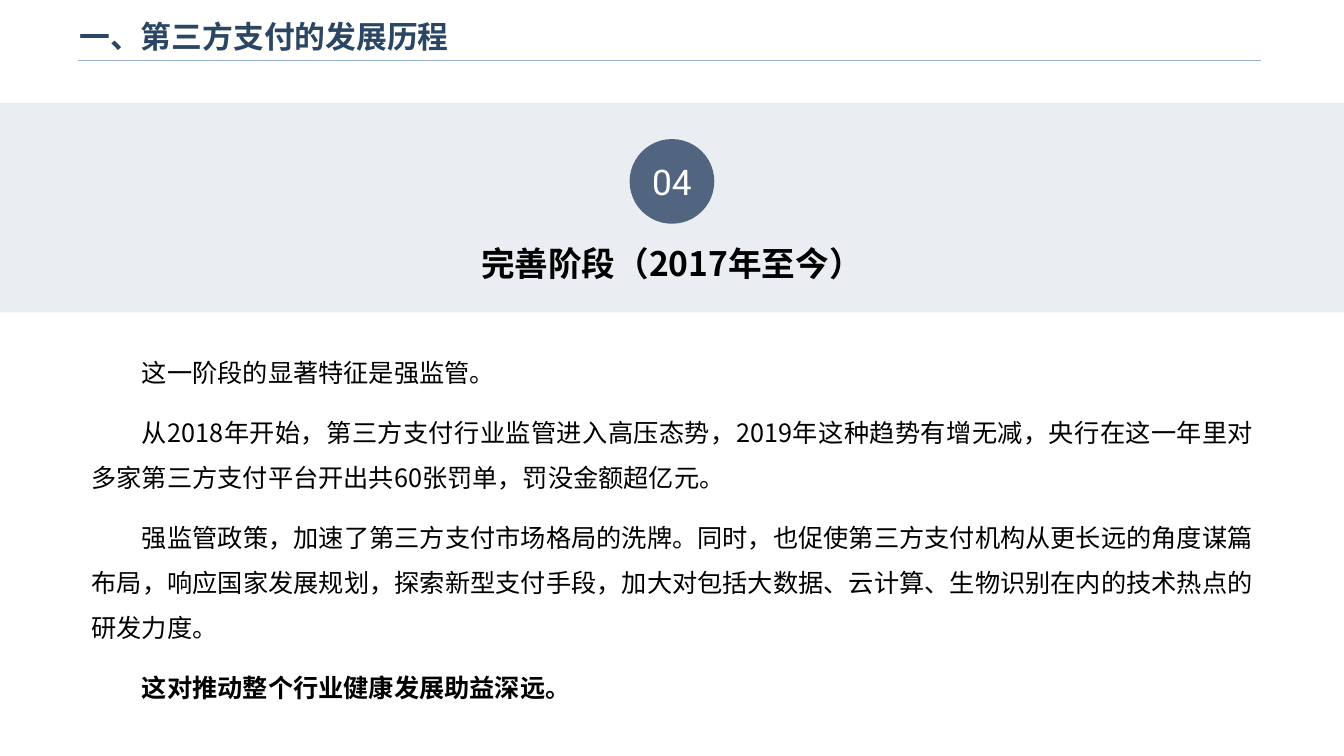
from lxml import etree
from pptx import Presentation
from pptx.dml.color import RGBColor
from pptx.enum.shapes import MSO_CONNECTOR, MSO_SHAPE
from pptx.enum.text import MSO_ANCHOR, PP_ALIGN
from pptx.oxml.ns import qn
from pptx.util import Inches, Pt

RECTANGLE, OVAL = MSO_SHAPE.RECTANGLE, MSO_SHAPE.OVAL
STRAIGHT = MSO_CONNECTOR.STRAIGHT
TOP, MIDDLE = MSO_ANCHOR.TOP, MSO_ANCHOR.MIDDLE
LEFT, CENTER, JUSTIFY = PP_ALIGN.LEFT, PP_ALIGN.CENTER, PP_ALIGN.JUSTIFY

SLIDE_WIDTH, SLIDE_HEIGHT = 13.33, 7.5
CHINESE_FONT = "Noto Sans CJK SC"
BODY = [
    ("这一阶段的显著特征是强监管。", False),
    ("从2018年开始，第三方支付行业监管进入高压态势，2019年这种趋势有增无减，"
     "央行在这一年里对多家第三方支付平台开出共60张罚单，罚没金额超亿元。", False),
    ("强监管政策，加速了第三方支付市场格局的洗牌。同时，也促使第三方支付机构从更长远的角度谋篇布局，"
     "响应国家发展规划，探索新型支付手段，加大对包括大数据、云计算、生物识别在内的技术热点的研发力度。", False),
    ("这对推动整个行业健康发展助益深远。", True),
]


def color(value):
    """Turn a hex string into a colour."""
    return RGBColor.from_string(value)


def add_paragraph(frame, text, size, font=CHINESE_FONT, fill="000000", bold=False,
                  align=LEFT, spacing=1.0, after=0, indent=0):
    """Write one formatted paragraph, using the empty first one if there is one."""
    paragraph = frame.paragraphs[0]
    if paragraph.runs:
        paragraph = frame.add_paragraph()
    paragraph.alignment = align
    paragraph.line_spacing = spacing
    paragraph.space_after = Pt(after)
    properties = paragraph._p.get_or_add_pPr()
    properties.set("marL", "0")
    properties.set("indent", str(Inches(indent)))
    run = paragraph.add_run()
    run.text = text
    run.font.name, run.font.size, run.font.bold = font, Pt(size), bold
    run.font.color.rgb = color(fill)
    east_asian = etree.SubElement(run._r.get_or_add_rPr(), qn("a:ea"))
    east_asian.set("typeface", CHINESE_FONT)


def add_text_box(slide, left, top, width, height, anchor=TOP):
    """Add a wrapping text box and return its text frame."""
    box = slide.shapes.add_textbox(Inches(left), Inches(top), Inches(width), Inches(height))
    frame = box.text_frame
    frame.word_wrap = True
    frame.vertical_anchor = anchor
    return frame


def add_filled_shape(slide, kind, left, top, width, height, fill):
    """Add a flat preset shape without an outline."""
    shape = slide.shapes.add_shape(kind, Inches(left), Inches(top), Inches(width), Inches(height))
    shape.shadow.inherit = False
    shape.fill.solid()
    shape.fill.fore_color.rgb = color(fill)
    shape.line.fill.background()
    return shape


def add_header(slide, left, top, width, height):
    """Place the slide title and the rule beneath it."""
    frame = add_text_box(slide, left, top, width, height, MIDDLE)
    add_paragraph(frame, "一、第三方支付的发展历程", 22, font="Arial", fill="2B4663", bold=True)
    rule_left, rule_top = left + 0.08, top + 0.51
    rule = slide.shapes.add_connector(STRAIGHT, Inches(rule_left), Inches(rule_top),
                                      Inches(rule_left + 11.74), Inches(rule_top))
    rule.line.color.rgb = color("98B4D2")
    rule.line.width = Pt(1)
    etree.SubElement(rule._element.spPr, qn("a:effectLst"))


def add_stage_band(slide, left, top, width, height):
    """Place the band with the stage number and the stage name."""
    add_filled_shape(slide, RECTANGLE, left, top, width, height, "EAEEF2")
    name_width, diameter = 11.24, 0.84
    name = add_text_box(slide, left + (width - name_width) / 2, top + 1.22, name_width, 0.62)
    add_paragraph(name, "完善阶段（2017年至今）", 24, bold=True, align=CENTER, spacing=1.3)
    badge = add_filled_shape(slide, OVAL, left + (width - diameter) / 2, top + 0.36,
                             diameter, diameter, "526580")
    frame = badge.text_frame
    frame.word_wrap = False
    frame.vertical_anchor = MIDDLE
    frame.margin_left = frame.margin_right = frame.margin_top = frame.margin_bottom = 0
    add_paragraph(frame, "04", 25.2, font="Roboto", fill="FFFFFF", align=CENTER)


def add_body(slide, left, top, width, height):
    """Place the indented, justified paragraphs."""
    frame = add_text_box(slide, left, top, width, height)
    for text, bold in BODY:
        add_paragraph(frame, text, 18, bold=bold, align=JUSTIFY, spacing=1.5, after=10, indent=0.5)


def main():
    """Build the slide and save it."""
    presentation = Presentation()
    presentation.slide_width = Inches(SLIDE_WIDTH)
    presentation.slide_height = Inches(SLIDE_HEIGHT)
    slide = presentation.slides.add_slide(presentation.slide_layouts[6])
    add_header(slide, 0.69, 0.09, 10.71, 0.53)
    add_stage_band(slide, 0, 1.02, SLIDE_WIDTH, 2.08)
    add_body(slide, 0.81, 3.35, 11.72, 3.7)
    presentation.save("out.pptx")


if __name__ == "__main__":
    main()
